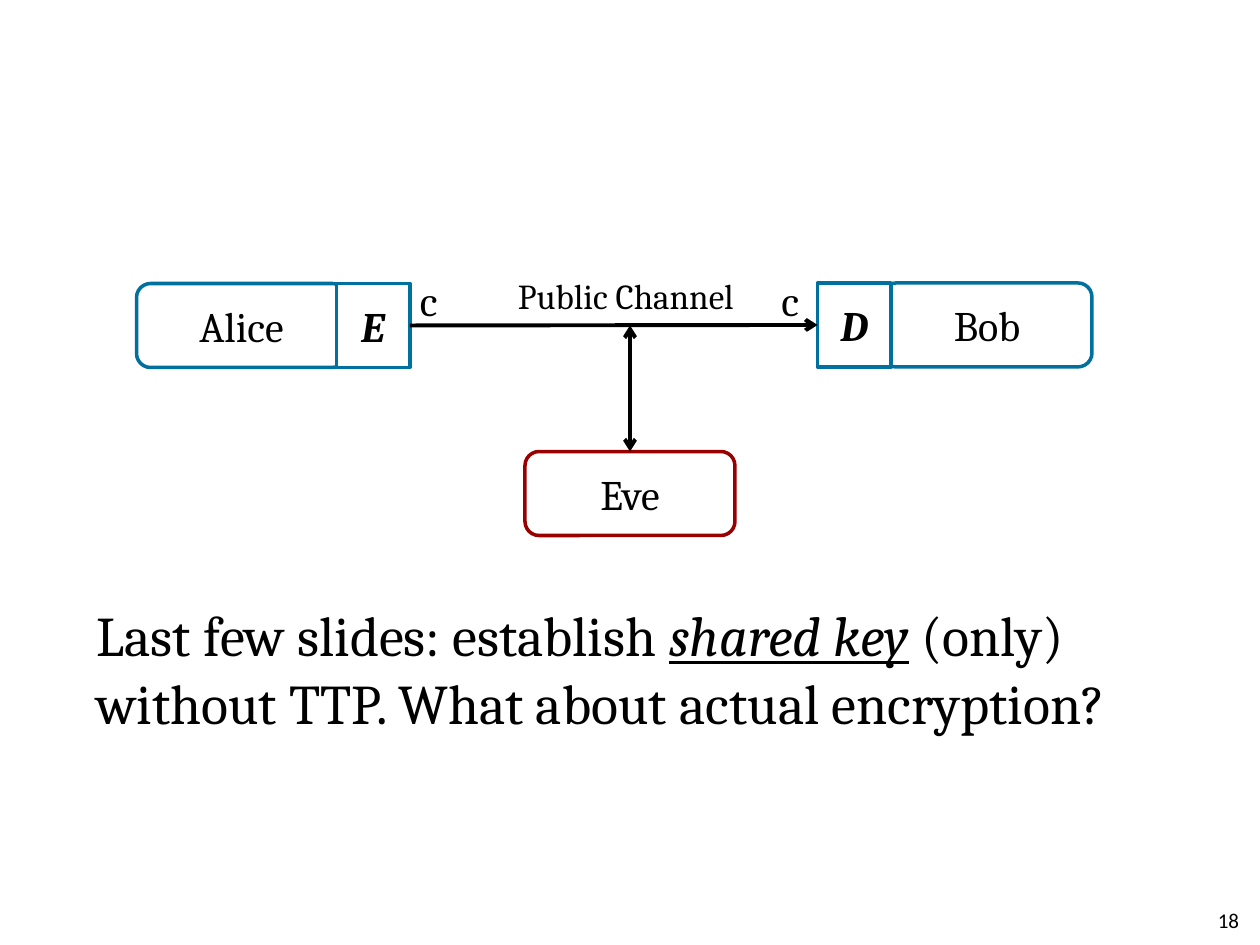
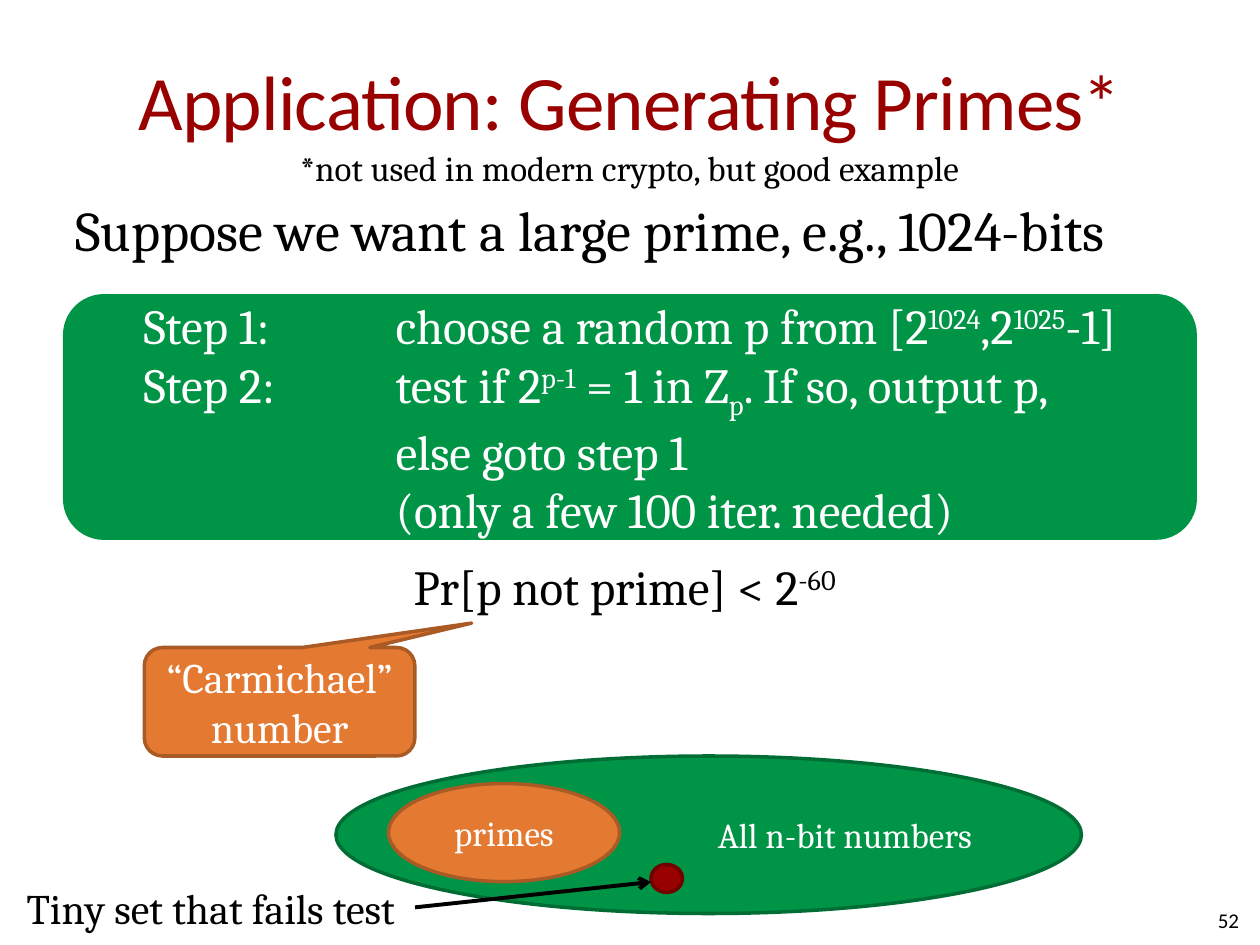
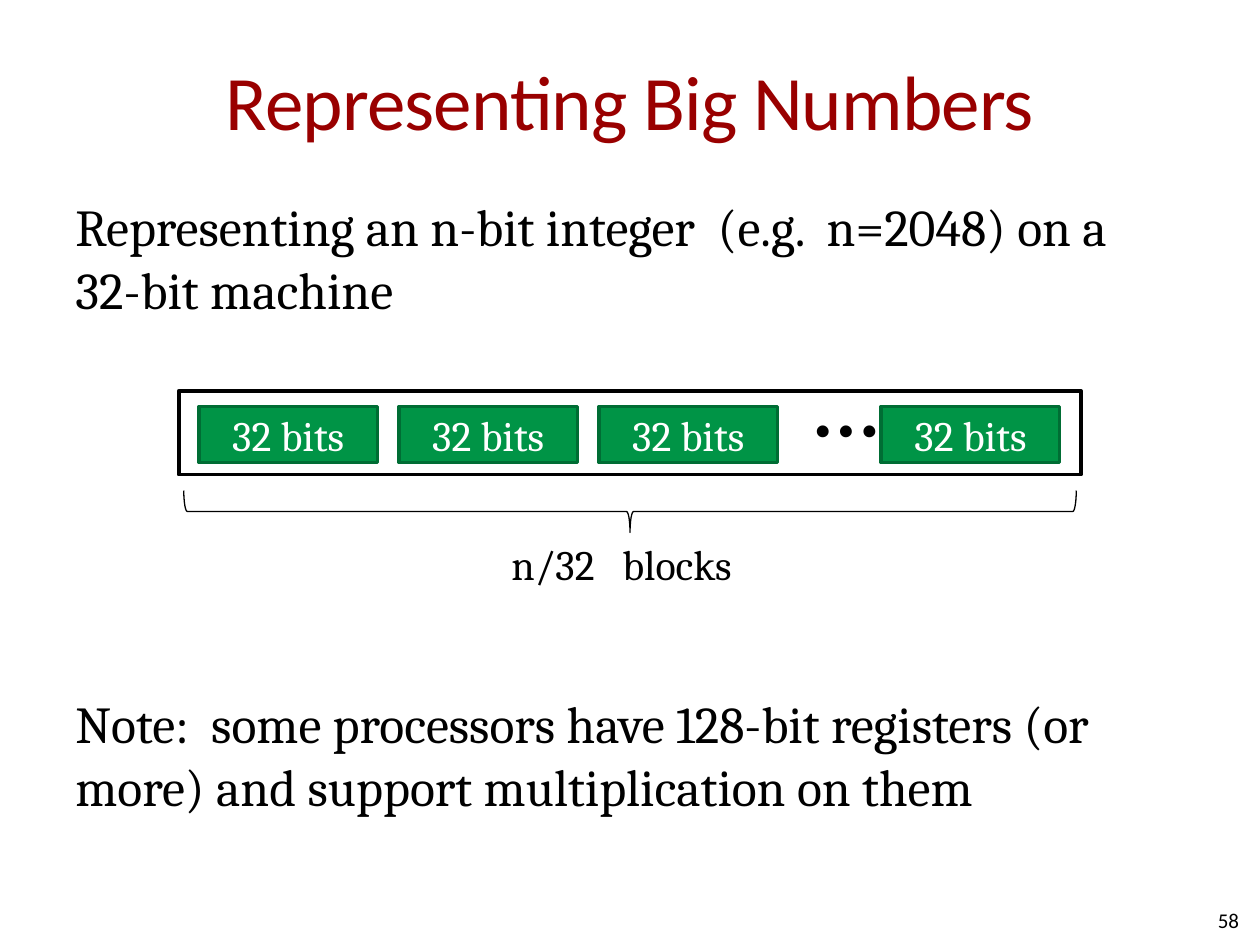
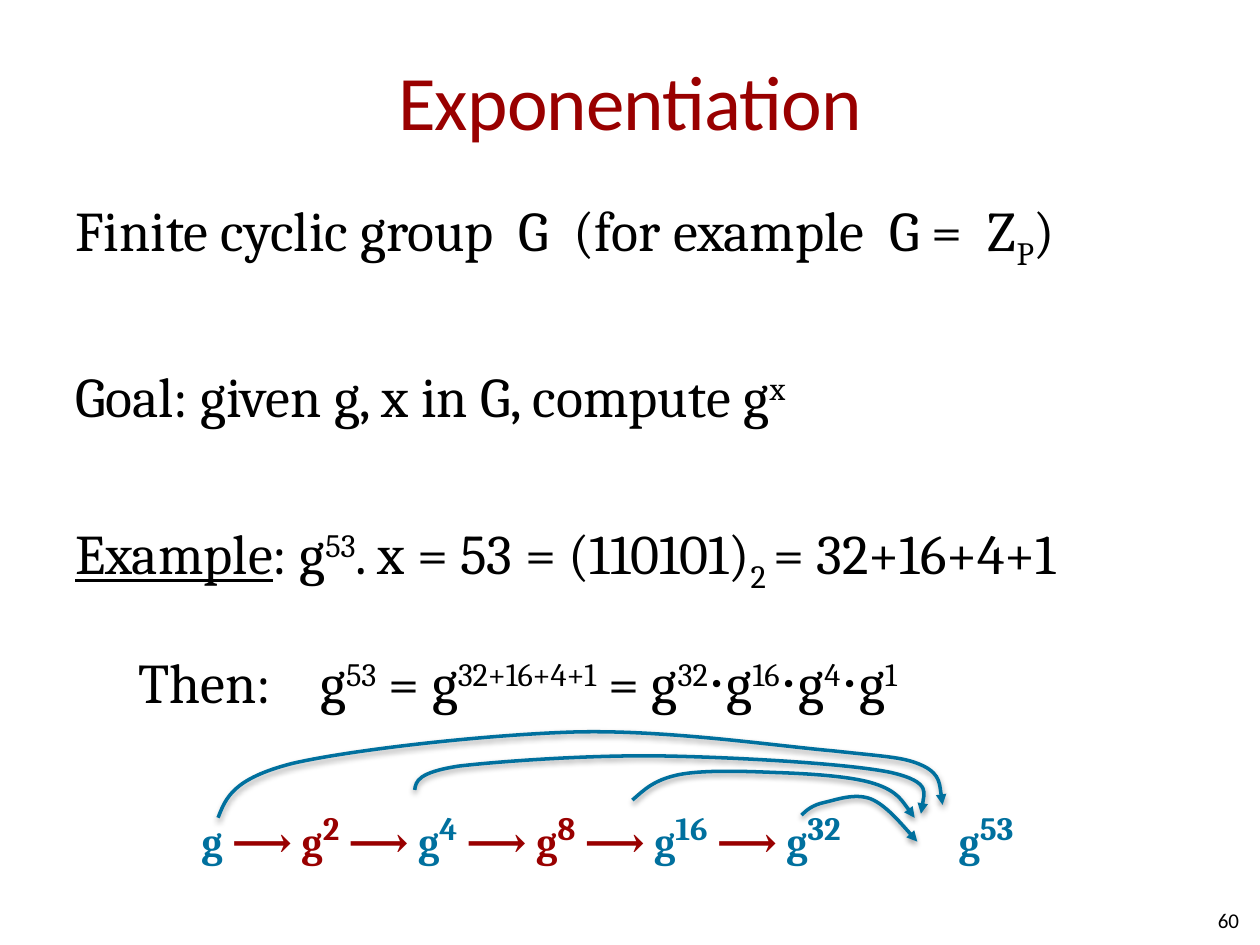
from lxml.etree import SubElement
from pptx import Presentation
from pptx.dml.color import RGBColor
from pptx.enum.shapes import MSO_CONNECTOR as LINK, MSO_SHAPE as KIND
from pptx.enum.text import MSO_ANCHOR as ANCHOR, PP_ALIGN as ALIGN
from pptx.oxml.ns import qn
from pptx.util import Pt

hue = RGBColor.from_string
BLACK, WHITE, RED, BLUE = "000000", "FFFFFF", "990000", "00709E"
GREEN, PINE, ORANGE, RUST, MAROON = "009446", "006D34", "E47932", "A95A25", "710000"
UP, DOWN = {"base": 30000}, {"base": -25000}
MID = {"anchor": ANCHOR.MIDDLE, "align": ALIGN.CENTER}
INSET = (7.2, 3.6)


def draw(slide, kind, at, fill=None, line=None, weight=2):
    """Add a preset shape, or a text box where kind is None."""
    place = [Pt(n) for n in at]
    if kind is None:
        return slide.shapes.add_textbox(*place)
    shape = slide.shapes.add_shape(kind, *place)
    shape.shadow.inherit = False
    if fill:
        shape.fill.solid()
        shape.fill.fore_color.rgb = hue(fill)
    else:
        shape.fill.background()
    if line:
        shape.line.color.rgb = hue(line)
        shape.line.width = Pt(weight)
    else:
        shape.line.fill.background()
    return shape


def write(shape, *paras, size=24, color=BLACK, font="Cambria", align=ALIGN.LEFT,
          anchor=ANCHOR.TOP, inset=(0, 0), wrap=True, gaps=(), left=0, hang=0, space=None):
    """Fill a shape; a paragraph is a string or a list of strings and (string, format) pairs."""
    frame = shape.text_frame
    frame.word_wrap = wrap
    frame.vertical_anchor = anchor
    frame.margin_left = frame.margin_right = Pt(inset[0])
    frame.margin_top = frame.margin_bottom = Pt(inset[1])
    for i, runs in enumerate(paras):
        para = frame.add_paragraph() if i else frame.paragraphs[0]
        para.alignment = align
        if i < len(gaps):
            para.space_before = Pt(gaps[i])
        # The indent applies to the last paragraph, or to all when there are no gaps
        if left and (not gaps or i == len(paras) - 1):
            props = para._p.get_or_add_pPr()
            props.set("marL", str(Pt(left)))
            props.set("indent", str(Pt(-hang)))
        for run in [runs] if isinstance(runs, str) else runs:
            words, form = (run, {}) if isinstance(run, str) else run
            for j, part in enumerate(words.split("\n")):
                if j:
                    para.add_line_break()
                piece = para.add_run()
                piece.text = part
                face = piece.font
                face.name = font
                face.size = Pt(form.get("size", size))
                face.color.rgb = hue(form.get("color", color))
                face.bold = form.get("bold")
                face.italic = form.get("italic")
                face.underline = form.get("under")
                if "base" in form:
                    piece._r.get_or_add_rPr().set("baseline", str(form["base"]))
                if space:
                    piece._r.get_or_add_rPr().set("spc", str(space))
    return shape


deck = Presentation()
deck.slide_width, deck.slide_height = Pt(720), Pt(540)

# Slides with their titles and numbers
slides = []
for number, title in [
    (18, None),
    (52, "Application: Generating Primes*"),
    (58, "Representing Big Numbers"),
    (60, "Exponentiation"),
]:
    slide = deck.slides.add_slide(deck.slide_layouts[6])
    slides.append(slide)
    if title:
        write(draw(slide, None, (36, 12, 648, 90)), title, size=44, color=RED,
              font="Calibri", inset=(0, 3.6), space=-50, **MID)
    write(draw(slide, None, (540, 511, 168, 29)), str(number), size=12,
          font="Calibri", align=ALIGN.RIGHT, anchor=ANCHOR.MIDDLE)
public, primes, big, power = slides
body = (36, 108, 648, 374.4)
arrows = []

# Slide 18: the public channel
write(draw(public, None, (48, 339.8, 624, 114.5)),
      ["Last few slides: establish ", ("shared key", {"italic": True, "under": True}),
       " (only) without TTP. What about actual encryption?"], size=32, inset=INSET)
for name, x, y, edge in [("Alice", 78, 162, BLUE), ("Bob", 504, 161.7, BLUE), ("Eve", 300, 258, RED)]:
    person = write(draw(public, KIND.ROUNDED_RECTANGLE, (x, y, 120, 48), WHITE, edge), name, **MID)
ends = []
for name, x, y in [("E", 192.2, 162), ("D", 467.2, 161.7)]:
    coder = draw(public, KIND.RECTANGLE, (x, y, 42, 48), WHITE, BLUE)
    ends.append(write(coder, [(name, {"bold": True, "italic": True})], **MID))
channel = public.shapes.add_connector(LINK.STRAIGHT, Pt(234), Pt(186), Pt(467), Pt(186))
channel.begin_connect(ends[0], 3)
channel.end_connect(ends[1], 1)
tap = public.shapes.add_connector(LINK.STRAIGHT, Pt(360), Pt(258), Pt(360), Pt(186))
tap.begin_connect(person, 0)
arrows += [(channel, ["tailEnd"]), (tap, ["headEnd", "tailEnd"])]
write(draw(public, None, (296, 157, 128, 24)), "Public Channel", size=20, wrap=False)
for x in (240, 446.5):
    write(draw(public, None, (x, 157, 11, 29)), "c", wrap=False)

# Slide 52: generating primes
write(draw(primes, None, body), "Suppose we want a large prime, e.g., 1024-bits", size=32, inset=INSET)
write(draw(primes, KIND.ROUNDED_RECTANGLE, (36, 168, 648, 140.5), GREEN),
      ["Step 1: \tchoose a random p from [2", ("1024", UP), ",2", ("1025", UP), "-1]"],
      ["Step 2: \ttest if 2", ("p-1", UP), " = 1 in Z", ("p", DOWN),
       ". If so, output p,\nelse goto step 1 \n(only a few 100 iter. needed)"],
      size=28, color=WHITE, anchor=ANCHOR.MIDDLE, left=183.2, hang=144)
write(draw(primes, None, (18, 318, 684, 34)), ["Pr[p not prime] < 2", ("-60", UP), " "],
      size=28, align=ALIGN.CENTER)
write(draw(primes, KIND.OVAL, (192, 432, 426, 90), GREEN, PINE), "All n-bit numbers",
      size=20, color=WHITE, align=ALIGN.RIGHT, anchor=ANCHOR.MIDDLE)
write(draw(primes, KIND.OVAL, (222, 447.8, 132, 56), ORANGE, RUST), "primes", size=20, color=WHITE, **MID)
draw(primes, KIND.OVAL, (372, 494, 18, 16), RED, MAROON)
label = write(draw(primes, None, (15.2, 504, 222, 29)), "Tiny set that fails test", wrap=False)
fails = primes.shapes.add_connector(LINK.STRAIGHT, Pt(237), Pt(519), Pt(372), Pt(504))
fails.begin_connect(label, 3)
arrows.append((fails, ["tailEnd"]))
note = draw(primes, KIND.ROUNDED_RECTANGULAR_CALLOUT, (82.5, 370, 154.6, 62), ORANGE, RUST)
for i, value in enumerate((0.71, -0.725, 0.167)):
    note.adjustments[i] = value
write(note, "“Carmichael” number", color=WHITE, **MID)
write(draw(primes, None, (158.6, 83.5, 402.5, 24)),
      "*not used in modern crypto, but good example", size=20, align=ALIGN.CENTER)

# Slide 58: a number in blocks
write(draw(big, None, body),
      "Representing an n-bit integer  (e.g.  n=2048) on a 32-bit machine",
      "Note:  some processors have 128-bit registers (or more) and support multiplication on them",
      size=29.6, inset=INSET, gaps=(6.4, 213))
for x in (113.7, 228, 342.3, 503.6):
    write(draw(big, KIND.RECTANGLE, (x, 232.3, 102, 32), GREEN, PINE), "32 bits",
          color=WHITE, inset=INSET, **MID)
write(draw(big, None, (456.5, 214, 60, 55)), [("⋯", {"bold": True})], size=40, inset=INSET)
brace = draw(big, KIND.RIGHT_BRACE, (348, 37.3, 24, 510), line=BLACK, weight=0.75)
brace.rotation = 90
write(draw(big, None, (285.2, 304.3, 149, 36)), "n/32   blocks", inset=INSET, wrap=False)
draw(big, KIND.RECTANGLE, (102.2, 223.3, 515.6, 48), line=BLACK)

# Slide 60: exponentiation by squaring
product = ["Then:\tg", ("53", UP), " = g", ("32+16+4+1", UP), " = g", ("32", UP)]
for n in (16, 4, 1):
    product += ["⋅g", (str(n), UP)]
write(draw(power, None, body),
      ["Finite cyclic group  G  (for example  G =  Z", ("P", DOWN), ")"],
      ["Goal: given g, x in G, compute g", ("x", UP)],
      [("Example", {"under": True}), ": g", ("53", UP), ". x = 53 = (110101)",
       ("2 ", DOWN), "= 32+16+4+1"],
      product, size=32, inset=INSET, gaps=(6.4, 51.5, 51.2, 29.8), left=140, hang=104)

chain = []
for n in (1, 2, 4, 8, 16, 32, 53):
    form = {"bold": True, "color": BLUE if n & 53 in (n, 53) else RED}
    if n > 1:
        chain.append(("\t" if n == 53 else " ⟶ ", {"bold": True, "color": RED}))
    chain.append(("g", form))
    if n > 1:
        chain.append((str(n), {**form, **UP, "size": 32}))
write(draw(power, None, (108, 454.3, 491, 36)), chain, inset=INSET, left=432.7, hang=432.7)

# Each curve is a start point, then three points for every cubic piece
curves = [
    [(124.6, 467.3), (129, 456), (133, 445), (167, 436.3), (201, 428.4), (278, 419.8),
     (329, 418.3), (381, 417), (443, 426.2), (476, 429.1), (509, 432.7), (517, 432.7),
     (527.8, 437.8), (537.8, 442.8), (538.6, 460), (538.6, 460)],
    [(237, 451.4), (237.6, 446.4), (239, 441.4), (262, 437.8), (286, 435), (337.7, 431.3),
     (378.7, 432), (419.8, 432.7), (484.6, 436.3), (509, 441.4), (533.5, 447), (526.3, 465),
     (526.3, 465)],
    [(361.4, 457.2), (368, 451.4), (373.7, 445.7), (387.4, 442.8), (400.3, 440), (423.4, 440.6),
     (442, 441.4), (460.8, 442), (486.7, 443.5), (499.7, 447.8), (513.4, 452.2), (522.7, 467.3),
     (522.7, 467.3)],
    [(458, 465.8), (460.8, 463), (464.4, 460), (471, 458.6), (477.4, 457.2), (488.2, 453),
     (497.5, 456.5), (506.2, 460), (524.2, 481), (524.2, 481)],
]
for curve in curves:
    start, *rest = [(Pt(x), Pt(y)) for x, y in curve]
    pen = power.shapes.build_freeform(*start)
    pen.add_line_segments(rest, close=False)
    arc = pen.convert_to_shape()
    arc.fill.background()
    arc.line.color.rgb = hue(BLUE)
    arc.line.width = Pt(2)
    SubElement(arc._element.spPr.get_or_add_ln(), qn("a:tailEnd"), type="triangle")
    # Turn every three straight pieces into one cubic piece
    trail = next(arc._element.iter(qn("a:path")))
    legs = trail.findall(qn("a:lnTo"))
    for k in range(0, len(legs), 3):
        bend = SubElement(trail, qn("a:cubicBezTo"))
        for leg in legs[k:k + 3]:
            bend.append(leg[0])
            trail.remove(leg)

# Straight arrows of all slides
for arrow, tips in arrows:
    arrow.line.color.rgb = hue(BLACK)
    arrow.line.width = Pt(2.25)
    for tip in tips:
        SubElement(arrow._element.spPr.get_or_add_ln(), qn("a:" + tip), type="arrow")
    SubElement(arrow._element.spPr, qn("a:effectLst"))

deck.save("out.pptx")
